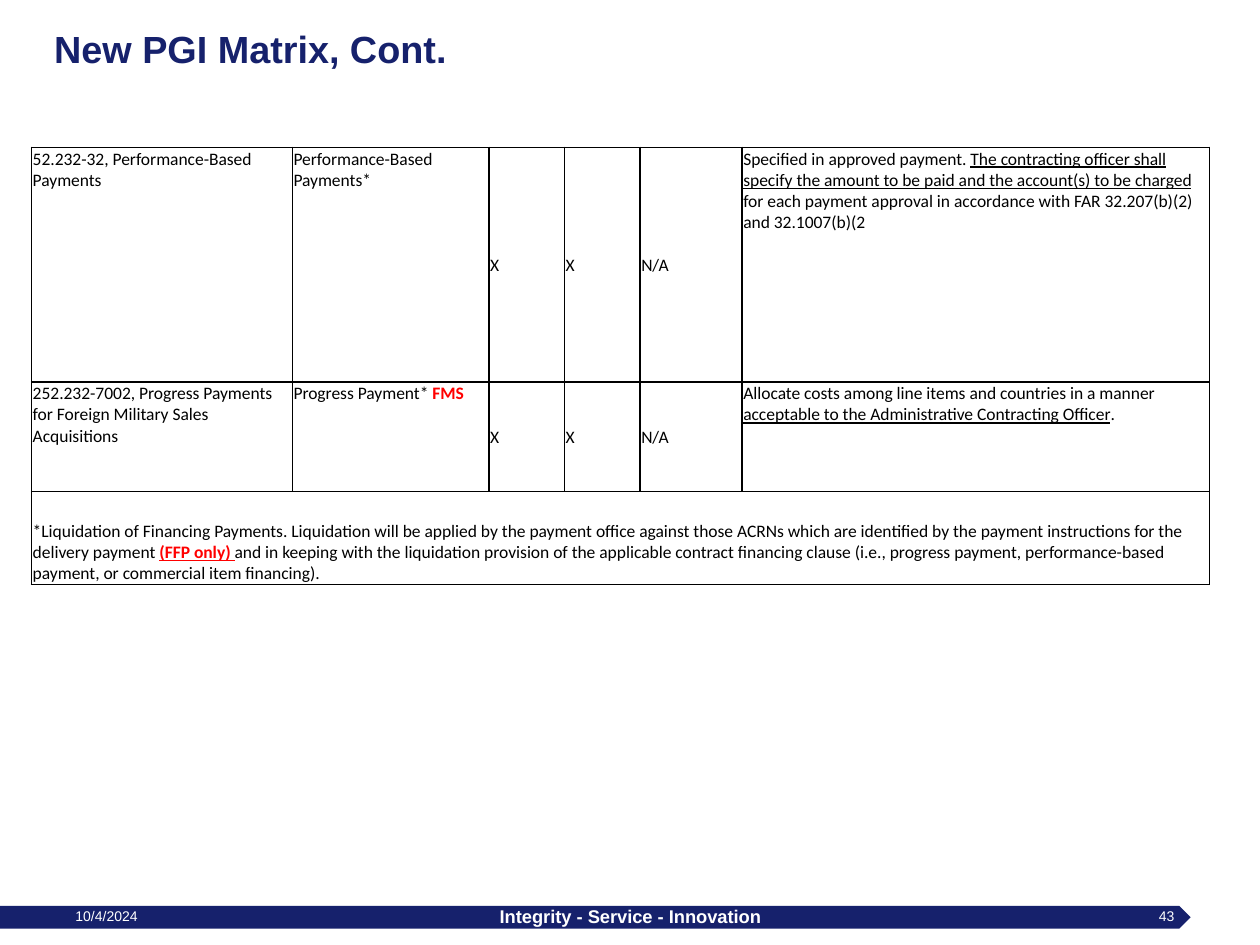
from lxml.etree import SubElement
from pptx import Presentation
from pptx.dml.color import RGBColor
from pptx.enum.shapes import MSO_SHAPE as Preset
from pptx.enum.text import MSO_ANCHOR as Anchor, MSO_AUTO_SIZE as AutoSize, PP_ALIGN as Align
from pptx.oxml.ns import qn
from pptx.util import Inches, Pt

NAVY, BLACK, RED, WHITE = "16216C", "000000", "FF0000", "FFFFFF"
UNDERLINED = {"underline": True}
COLUMN_WIDTHS = [2.07, 1.56, 0.6, 0.6, 0.81, 3.71]
ROW_HEIGHTS = [1.86, 0.87, 0.74]
MARKS = ["X", "X", "N/A"]
CLAUSES = [
    ["52.232-32, Performance-Based Payments", "Performance-Based Payments*", *MARKS,
     ["Specified in approved payment. ",
      ("The contracting officer shall specify the amount to be paid and the account(s) "
       "to be charged ", UNDERLINED),
      "for each payment approval in accordance with FAR 32.207(b)(2) and 32.1007(b)(2"]],
    ["252.232-7002, Progress Payments for Foreign Military Sales Acquisitions",
     ["Progress Payment* ", ("FMS", {"color": RED, "bold": True})], *MARKS,
     ["Allocate costs among line items and countries in a manner ",
      ("acceptable to the Administrative Contracting Officer", UNDERLINED), "."]],
]
LIQUIDATION_NOTE = [
    "*Liquidation of Financing Payments. Liquidation will be applied by the payment office "
    "against those ACRNs which are identified by the payment instructions for the delivery "
    "payment ",
    ("(FFP only) ", {"color": RED, "bold": True, "underline": True}),
    "and in keeping with the liquidation provision of the applicable contract financing clause "
    "(i.e., progress payment, performance-based payment, or commercial item financing).",
]


def rgb(value):
    """Turn a hex string into a colour."""
    return RGBColor.from_string(value)


def write(paragraph, text, size=10, font="Calibri", color=BLACK, bold=False,
          underline=False, align=Align.LEFT):
    """Add one formatted run to a paragraph."""
    paragraph.alignment = align
    run = paragraph.add_run()
    run.text = text
    run.font.size, run.font.name = Pt(size), font
    run.font.bold, run.font.underline = bold, underline
    run.font.color.rgb = rgb(color)


def fill_frame(shape, text, **style):
    """Put one vertically centred line of Arial in a shape."""
    frame = shape.text_frame
    frame.word_wrap, frame.auto_size = True, AutoSize.NONE
    frame.vertical_anchor = Anchor.MIDDLE
    frame.margin_left = frame.margin_right = Inches(0.1)
    frame.margin_top = frame.margin_bottom = 0
    write(frame.paragraphs[0], text, font="Arial", **style)


def add_title(slide, text):
    """Place and fill the title placeholder."""
    title = slide.shapes.title
    title.left, title.top, title.width, title.height = map(Inches, (0.33, 0.17, 9.33, 0.42))
    fill_frame(title, text, size=21.6, color=NAVY, bold=True)


def add_footer_band(slide):
    """Draw the pointed band at the foot of the slide."""
    band = slide.shapes.add_shape(Preset.PENTAGON, 0, Inches(7.19), Inches(9.45), Inches(0.18))
    band.shadow.inherit = False
    band.fill.solid()
    band.fill.fore_color.rgb = rgb(NAVY)
    band.line.fill.background()


def add_footer_text(slide, text, left, width, **style):
    """Write one white entry on the footer band."""
    box = slide.shapes.add_textbox(Inches(left), Inches(7.18), Inches(width), Inches(0.18))
    fill_frame(box, text, color=WHITE, **style)


def add_borders(cell):
    """Give a cell thin black lines on all four sides."""
    properties = cell._tc.get_or_add_tcPr()
    for position, side in enumerate(("a:lnL", "a:lnR", "a:lnT", "a:lnB")):
        line = properties.makeelement(qn(side), {"w": str(Pt(1))})
        SubElement(SubElement(line, qn("a:solidFill")), qn("a:srgbClr"), val=BLACK)
        properties.insert(position, line)


def fill_cell(cell, content, anchor):
    """Write plain text or a list of styled pieces in a cell."""
    cell.margin_left = cell.margin_right = cell.margin_top = Inches(0.01)
    cell.margin_bottom = 0
    cell.vertical_anchor = anchor
    pieces = [content] if isinstance(content, str) else content
    for piece in pieces:
        text, style = (piece, {}) if isinstance(piece, str) else piece
        write(cell.text_frame.paragraphs[0], text, **style)


def add_matrix(slide):
    """Build the clause table with its full-width closing note."""
    frame = slide.shapes.add_table(len(ROW_HEIGHTS), len(COLUMN_WIDTHS), Inches(0.25),
                                   Inches(1.17), Inches(9.33), Inches(3.48))
    table = frame.table
    table.first_row = table.horz_banding = False
    for column, width in zip(table.columns, COLUMN_WIDTHS):
        column.width = Inches(width)
    for row, height in zip(table.rows, ROW_HEIGHTS):
        row.height = Inches(height)
    for cell in table.iter_cells():
        cell.fill.background()
        add_borders(cell)
    for row, contents in enumerate(CLAUSES):
        for column, content in enumerate(contents):
            anchor = Anchor.MIDDLE if content in MARKS else Anchor.TOP
            fill_cell(table.cell(row, column), content, anchor)
    note = table.cell(len(CLAUSES), 0)
    note.merge(table.cell(len(CLAUSES), len(COLUMN_WIDTHS) - 1))
    fill_cell(note, LIQUIDATION_NOTE, Anchor.BOTTOM)


def main():
    """Build and save the slide."""
    presentation = Presentation()
    presentation.slide_width, presentation.slide_height = Inches(10), Inches(7.5)
    slide = presentation.slides.add_slide(presentation.slide_layouts.get_by_name("Title Only"))
    add_footer_band(slide)
    add_title(slide, "New PGI Matrix, Cont.")
    add_footer_text(slide, "10/4/2024", 0.5, 2.33, size=8)
    add_footer_text(slide, "Integrity - Service - Innovation", 3.42, 3.17, size=10.5,
                    bold=True, align=Align.CENTER)
    add_matrix(slide)
    add_footer_text(slide, "43", 7.17, 2.25, size=8, align=Align.RIGHT)
    presentation.save("out.pptx")


if __name__ == "__main__":
    main()
